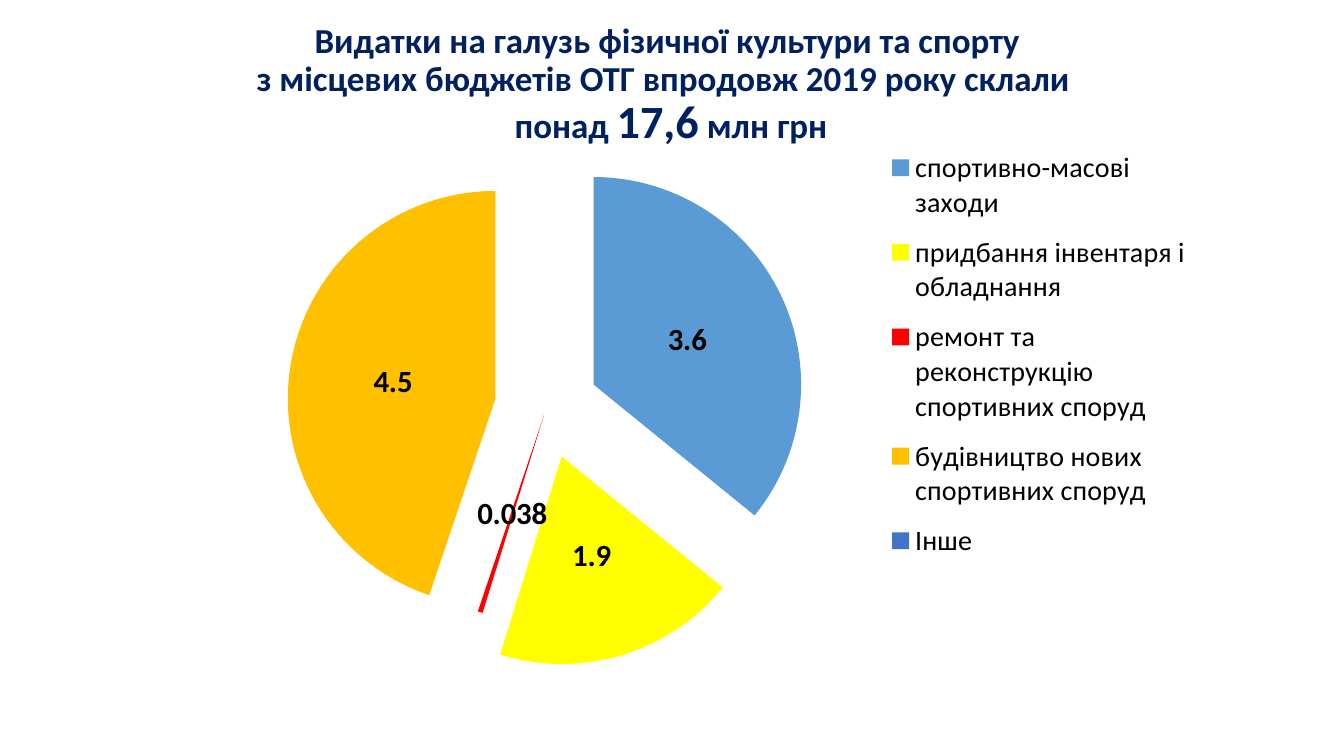
from dataclasses import dataclass

from lxml import etree
from pptx import Presentation
from pptx import util as u
from pptx.chart.data import CategoryChartData
from pptx.dml.color import RGBColor
from pptx.enum import chart as ch, text
from pptx.oxml.ns import qn


@dataclass(frozen=True)
class Theme:
    font: str = "Calibri"
    navy: str = "002060"
    black: str = "000000"
    title: int = 25
    amount: int = 33
    base: int = 18
    legend: int = 20
    label: int = 22


THEME = Theme()

# Spending item, value, slice colour, explosion in percent
SPENDING = [
    ("спортивно-масові заходи", 3.6, "5B9BD5", 25),
    ("придбання інвентаря і обладнання", 1.9, "FFFF00", 25),
    ("ремонт та реконструкцію спортивних споруд", 0.038, "FF0000", 4),
    ("будівництво нових спортивних споруд", 4.5, "FFC000", 25),
    ("Інше", None, "4472C4", 25),
]

# Title lines, each a list of (text, size)
TITLE = [
    [("Видатки на галузь фізичної культури та спорту ", THEME.title)],
    [("з місцевих бюджетів ОТГ впродовж 2019 року склали  ", THEME.title)],
    [("понад ", THEME.title), ("17,6", THEME.amount), (" млн грн", THEME.title)],
]


def set_attrs(obj, values):
    for name, value in values.items():
        setattr(obj, name, value)


def style_font(font, size, color, bold=False):
    set_attrs(font, {"name": THEME.font, "size": u.Pt(size), "bold": bold})
    font.color.rgb = RGBColor.from_string(color)


def place(sp, left, top, width, height):
    box = {"left": left, "top": top, "width": width, "height": height}
    set_attrs(sp, {side: u.Inches(value) for side, value in box.items()})


def add_title(slide):
    sp = slide.shapes.title
    place(sp, 0.85, 0, 11.61, 1.71)
    tf = sp.text_frame
    set_attrs(tf, {"word_wrap": True, "auto_size": text.MSO_AUTO_SIZE.NONE,
                   "vertical_anchor": text.MSO_ANCHOR.MIDDLE})
    p = tf.paragraphs[0]
    set_attrs(p, {"alignment": text.PP_ALIGN.CENTER, "line_spacing": 0.9})
    for i, line in enumerate(TITLE):
        if i:
            p.add_line_break()
        for words, size in line:
            r = p.add_run()
            r.text = words
            style_font(r.font, size, THEME.navy, True)


def set_layout(parent, x, y, w, h, inner=False):
    """Fix the place of a chart part, in fractions of the chart area."""
    layout = parent.find(qn("c:layout"))
    if layout is None:
        layout = etree.Element(qn("c:layout"))
        pos = parent.find(qn("c:legendPos"))
        parent.insert(0 if pos is None else parent.index(pos) + 1, layout)
    manual = etree.SubElement(layout, qn("c:manualLayout"))
    values = {"layoutTarget": "inner"} if inner else {}
    values.update(xMode="edge", yMode="edge", x=x, y=y, w=w, h=h)
    for tag, value in values.items():
        etree.SubElement(manual, qn(f"c:{tag}")).set("val", str(value))


def style_slices(series):
    for i, (_, _, color, explosion) in enumerate(SPENDING):
        fill = series.points[i].format.fill
        fill.solid()
        fill.fore_color.rgb = RGBColor.from_string(color)
        point = series._element.findall(qn("c:dPt"))[i]
        shift = etree.Element(qn("c:explosion"))
        shift.set("val", str(explosion))
        point.find(qn("c:spPr")).addprevious(shift)


def add_pie(slide):
    data = CategoryChartData()
    data.categories = [item[0] for item in SPENDING]
    data.add_series("Series 1", [item[1] for item in SPENDING])
    frame = slide.shapes.add_chart(
        ch.XL_CHART_TYPE.PIE, u.Inches(2.07), u.Inches(1.34),
        u.Inches(9.86), u.Inches(5.8), data)
    chart = frame.chart
    set_attrs(chart, {"has_title": False, "has_legend": True})
    style_font(chart.font, THEME.base, THEME.black)

    # Slices and their values
    plot = chart.plots[0]
    set_attrs(plot, {"vary_by_categories": True, "has_data_labels": True})
    style_slices(plot.series[0])
    labels = plot.data_labels
    set_attrs(labels, {"show_value": True, "show_percentage": False,
                       "number_format": "General",
                       "number_format_is_linked": False,
                       "position": ch.XL_LABEL_POSITION.CENTER})
    style_font(labels.font, THEME.label, THEME.black, True)

    # Legend and plot position
    legend = chart.legend
    set_attrs(legend, {"position": ch.XL_LEGEND_POSITION.RIGHT,
                       "include_in_layout": False})
    style_font(legend.font, THEME.legend, THEME.black)
    set_layout(legend._element, 0.68, 0, 0.31, 0.75)
    area = chart._chartSpace.find(".//" + qn("c:plotArea"))
    set_layout(area, 0.13, 0.11, 0.42, 0.71, inner=True)


def main():
    prs = Presentation()
    set_attrs(prs, {"slide_width": u.Inches(13.33), "slide_height": u.Inches(7.5)})
    slide = prs.slides.add_slide(prs.slide_layouts[5])
    add_title(slide)
    add_pie(slide)
    prs.save("out.pptx")


if __name__ == "__main__":
    main()
